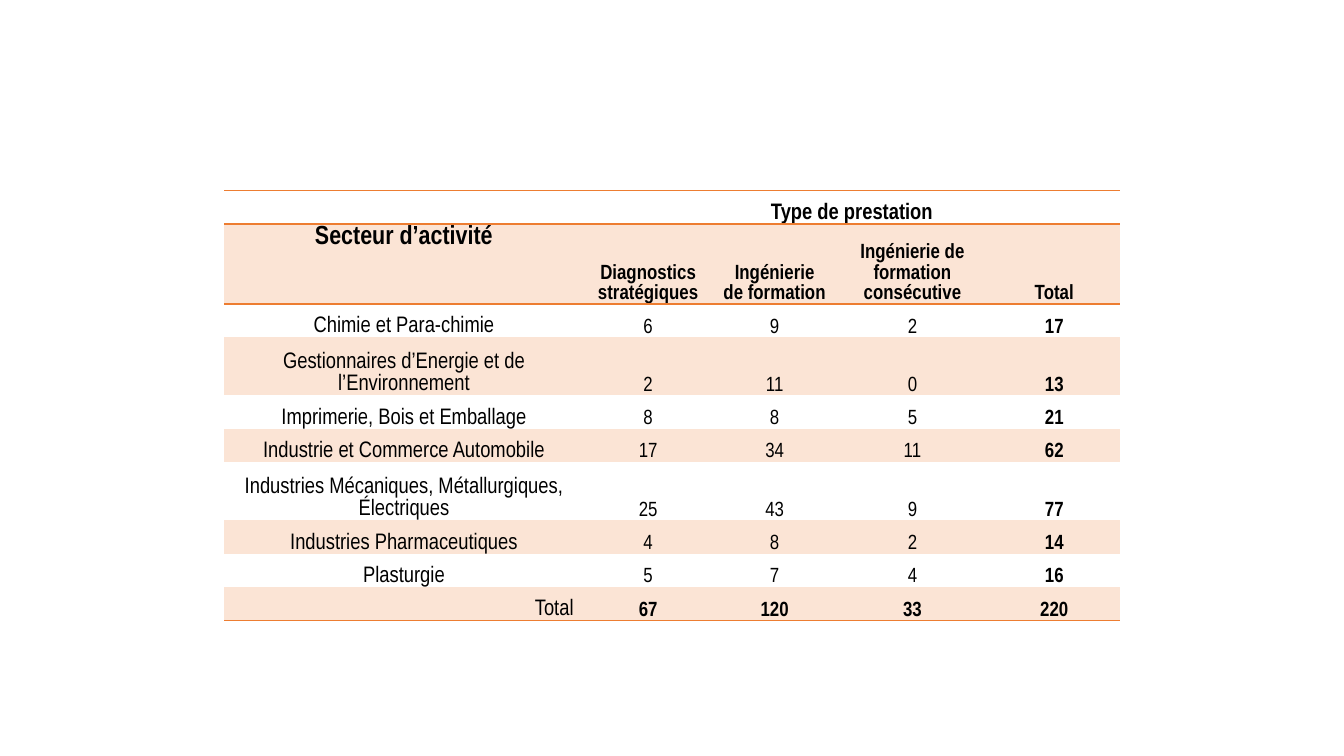
from lxml import etree
from pptx import Presentation
from pptx import util as u
from pptx.dml import color
from pptx.enum import text
from pptx.oxml import ns

FONT, INK, LINE, BAND = "Arial Narrow", "000000", "ED7D31", "FBE4D5"
NO_STYLE = "{2D5ABB26-0587-4C30-8999-92F81FD0307C}"

COLS = [6.79, 2.44, 2.34, 2.87, 2.49]
LOW, MID, HIGH = 0.63, 1.1, 1.51
HEADS = ["Secteur d’activité", "Diagnostics stratégiques",
         "Ingénierie de formation",
         "Ingénierie de formation consécutive", "Total"]
ROWS = [
    ("Chimie et Para-chimie", 6, 9, 2, 17),
    ("Gestionnaires d’Energie et de l’Environnement", 2, 11, 0, 13),
    ("Imprimerie, Bois et Emballage", 8, 8, 5, 21),
    ("Industrie et Commerce Automobile", 17, 34, 11, 62),
    ("Industries Mécaniques, Métallurgiques, Électriques", 25, 43, 9, 77),
    ("Industries Pharmaceutiques", 4, 8, 2, 14),
    ("Plasturgie", 5, 7, 4, 16),
    ("Total", 67, 120, 33, 220),
]


def tint(code):
    return color.RGBColor.from_string(code)


class Deck:
    def __init__(self):
        self.prs = Presentation()
        self.prs.slide_width = u.Cm(25.4)
        self.prs.slide_height = u.Cm(14.28)
        self.slide = self.prs.slides.add_slide(self.prs.slide_layouts[6])

    def table(self, left, top, cols, rows):
        frame = self.slide.shapes.add_table(
            len(rows), len(cols), u.Cm(left), u.Cm(top),
            u.Cm(sum(cols)), u.Cm(sum(rows)))
        grid = frame.table
        grid.first_row = grid.horz_banding = False
        grid._tbl.tblPr.find(ns.qn("a:tableStyleId")).text = NO_STYLE
        for col, wide in zip(grid.columns, cols):
            col.width = u.Cm(wide)
        for row, high in zip(grid.rows, rows):
            row.height = u.Cm(high)
        return grid

    def edge(self, cell, side):
        props = cell._tc.get_or_add_tcPr()
        line = etree.SubElement(props, ns.qn("a:ln" + side), w=str(u.Pt(1)))
        fill = etree.SubElement(line, ns.qn("a:solidFill"))
        etree.SubElement(fill, ns.qn("a:srgbClr"), val=LINE)

    def cell(self, cell, band, edges=""):
        cell.margin_left = cell.margin_right = u.Cm(0.19)
        cell.margin_top = cell.margin_bottom = 0
        cell.vertical_anchor = text.MSO_ANCHOR.BOTTOM
        for side in edges:
            self.edge(cell, side)
        if band:
            cell.fill.solid()
            cell.fill.fore_color.rgb = tint(BAND)
        else:
            cell.fill.background()
        # Small end mark, so that an empty cell does not stretch its row
        para = cell.text_frame.paragraphs[0]
        etree.SubElement(para._p, ns.qn("a:endParaRPr"), sz="1100")

    def label(self, cell, words, size, bold=False, align="CENTER"):
        para = cell.text_frame.paragraphs[0]
        para.alignment = text.PP_ALIGN[align]
        para.line_spacing = 1.07
        run = para.add_run()
        run.text = str(words)
        font = run.font
        font.name, font.size, font.bold = FONT, u.Pt(size), bold
        font.color.rgb = tint(INK)


def main():
    deck = Deck()
    highs = [LOW, HIGH] + [MID if len(r[0]) > 40 else LOW for r in ROWS]
    grid = deck.table(4.24, 3.6, COLS, highs)
    last = len(highs) - 1

    # Bands and rules
    edges = {0: "TB", 1: "T", last: "B"}
    for i in range(len(highs)):
        for j in range(len(COLS)):
            deck.cell(grid.cell(i, j), i % 2 == 1, edges.get(i, ""))

    # Header rows
    grid.cell(0, 1).merge(grid.cell(0, 4))
    deck.label(grid.cell(0, 1), "Type de prestation", 12, True)
    for j, head in enumerate(HEADS):
        deck.label(grid.cell(1, j), head, 11 if j else 14, True)
    grid.cell(1, 0).vertical_anchor = text.MSO_ANCHOR.TOP

    # Sectors, counts and totals
    for i, (name, *nums) in enumerate(ROWS, 2):
        side = "RIGHT" if i == last else "CENTER"
        deck.label(grid.cell(i, 0), name, 12, align=side)
        for j, num in enumerate(nums, 1):
            deck.label(grid.cell(i, j), num, 11, i == last or j == 4)

    deck.prs.save("out.pptx")


if __name__ == "__main__":
    main()
